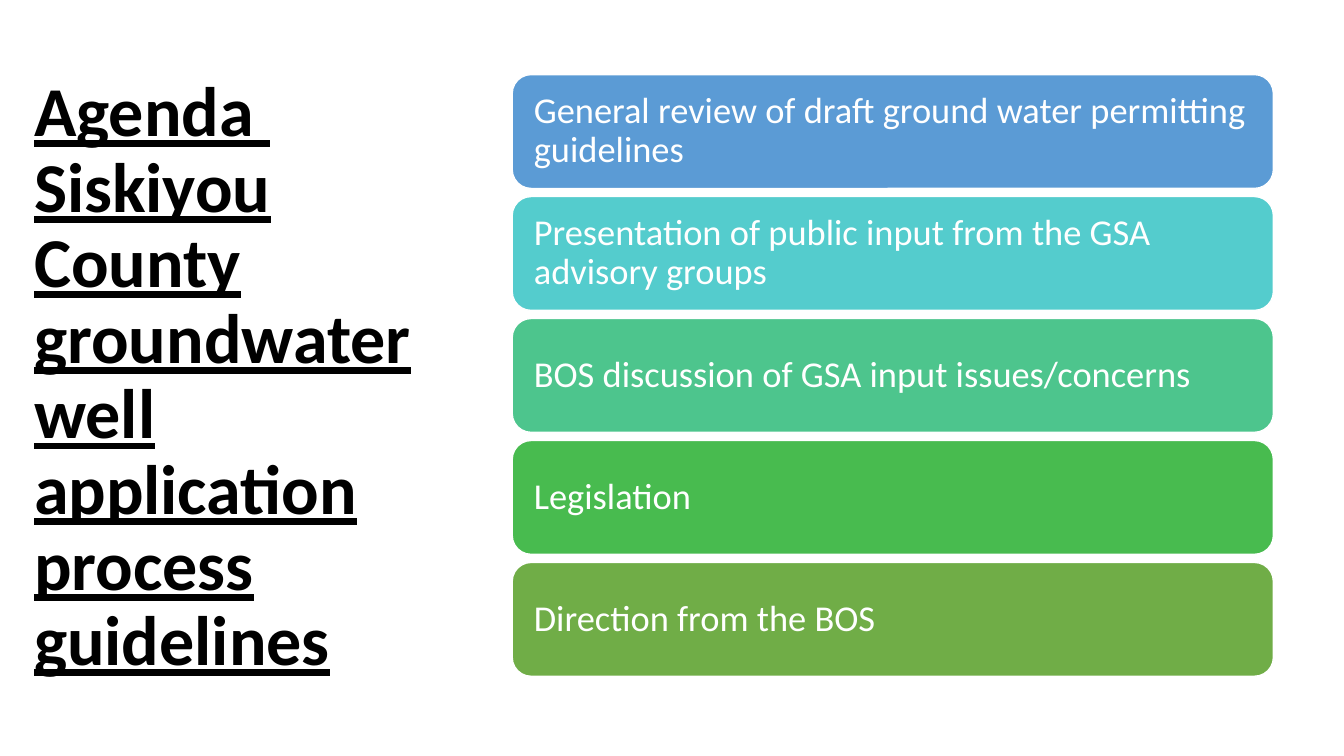
import pptx
import pptx.util
import pptx.dml.color
import pptx.enum.shapes
import pptx.enum.text

Inches = pptx.util.Inches
Color = pptx.dml.color.RGBColor.from_string

theme = {
    "font": "Calibri",
    "title": 50,
    "item": 26,
    "dark": "000000",
    "light": "FFFFFF",
    "fills": ["5B9BD5", "54CCCD", "4DC58D", "48BB4F", "70AD47"],
}
items = [
    "General review of draft ground water permitting guidelines",
    "Presentation of public input from the GSA advisory groups",
    "BOS discussion of GSA input issues/concerns",
    "Legislation",
    "Direction from the BOS",
]


def write(shape, text, size, color):
    frame = shape.text_frame
    frame.word_wrap = True
    frame.vertical_anchor = pptx.enum.text.MSO_ANCHOR.MIDDLE
    para = frame.paragraphs[0]
    para.text = text
    para.alignment = pptx.enum.text.PP_ALIGN.LEFT
    para.line_spacing = 0.9
    para.font.name = theme["font"]
    para.font.size = pptx.util.Pt(size)
    para.font.color.rgb = Color(color)
    return para


deck = pptx.Presentation()
deck.slide_width = Inches(13.33)
deck.slide_height = Inches(7.5)
slide = deck.slides.add_slide(deck.slide_layouts[6])

title = slide.shapes.add_textbox(Inches(0.24), Inches(0.7), Inches(4.5), Inches(6.11))
para = write(
    title,
    "Agenda \vSiskiyou County groundwater well application process guidelines",
    theme["title"],
    theme["dark"],
)
para.font.bold = True
para.font.underline = True

left, top, width, height = 5.08, 0.74, 7.55, 1.13
pitch = 1.21
inset = Inches(0.16)

for row, (text, fill) in enumerate(zip(items, theme["fills"])):
    card = slide.shapes.add_shape(
        pptx.enum.shapes.MSO_SHAPE.ROUNDED_RECTANGLE,
        Inches(left), Inches(top + row * pitch), Inches(width), Inches(height),
    )
    card.shadow.inherit = False
    card.fill.solid()
    card.fill.fore_color.rgb = Color(fill)
    card.line.color.rgb = Color(theme["light"])
    card.line.width = pptx.util.Pt(1)
    frame = card.text_frame
    frame.margin_left = frame.margin_right = inset
    frame.margin_top = frame.margin_bottom = inset
    write(card, text, theme["item"], theme["light"])

deck.save("out.pptx")
